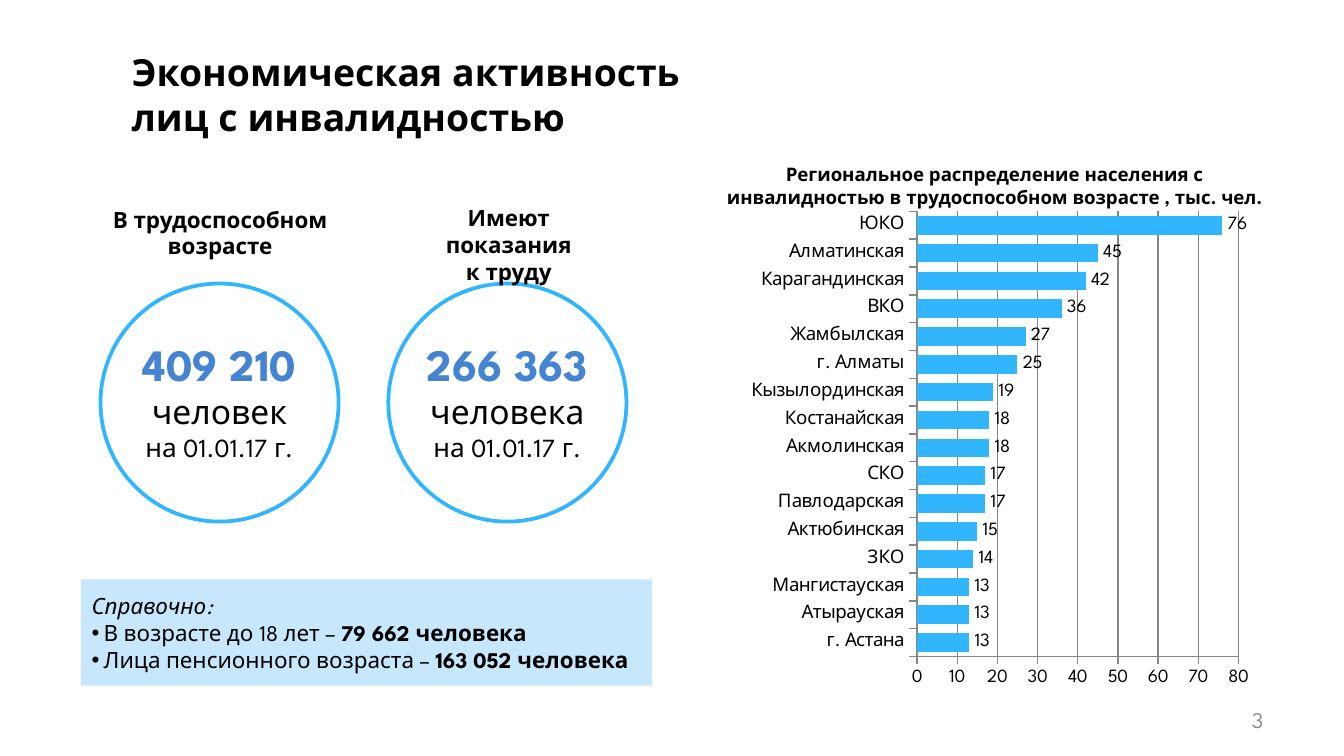
from dataclasses import dataclass

from lxml.etree import SubElement
from pptx import Presentation
from pptx.chart.data import CategoryChartData
from pptx.dml.color import RGBColor
from pptx.enum.chart import XL_CHART_TYPE, XL_LABEL_POSITION, XL_TICK_MARK
from pptx.enum.shapes import MSO_SHAPE
from pptx.enum.text import MSO_ANCHOR, MSO_AUTO_SIZE, PP_ALIGN
from pptx.oxml import parse_xml
from pptx.oxml.ns import nsdecls, qn
from pptx.util import Cm, Pt

TITLE = "Экономическая активность\vлиц с инвалидностью"
PAGE_NUMBER = "3"
GROUPS = [
    {"label": ["В трудоспособном возрасте"], "label_at": (1.85, 3.76, 4.62),
     "count": "409 210 ", "unit": "человек"},
    {"label": ["Имеют показания", "к труду"], "label_at": (7.62, 3.73, 3.99),
     "count": "266 363 ", "unit": "человека"},
]
DATE = "на 01.01.17 г."
REFERENCE = "Справочно:"
REFERENCE_ITEMS = [
    ("В возрасте до 18 лет – ", "79 662 человека"),
    ("Лица пенсионного возраста – ", "163 052 человека"),
]
CHART_TITLE = ("Региональное распределение населения с инвалидностью "
               "в трудоспособном возрасте , тыс. чел.")
REGIONS = [  # from the top bar down
    ("ЮКО", 76), ("Алматинская", 45), ("Карагандинская", 42), ("ВКО", 36),
    ("Жамбылская", 27), ("г. Алматы", 25), ("Кызылординская", 19),
    ("Костанайская", 18), ("Акмолинская", 18), ("СКО", 17),
    ("Павлодарская", 17), ("Актюбинская", 15), ("ЗКО", 14),
    ("Мангистауская", 13), ("Атырауская", 13), ("г. Астана", 13),
]
PLOT_AREA = {"x": 0.34, "y": 0.02, "w": 0.62, "h": 0.9}


@dataclass(frozen=True)
class Theme:
    font: str = "League Spartan"
    black: RGBColor = RGBColor(0, 0, 0)
    white: RGBColor = RGBColor(255, 255, 255)
    bright: RGBColor = RGBColor(0x31, 0xB6, 0xFD)
    number: RGBColor = RGBColor(0x45, 0x84, 0xD3)
    pale: RGBColor = RGBColor(0xC6, 0xE7, 0xFC)
    muted: RGBColor = RGBColor(0x8C, 0x8C, 0x8C)
    grid: RGBColor = RGBColor(0x86, 0x86, 0x86)
    title: int = 20
    count: int = 24
    unit: int = 18
    date: int = 14
    text: int = 12
    small: int = 10


THEME = Theme()


def style(font, size, color=THEME.black, bold=False, italic=False):
    font.name, font.size = THEME.font, Pt(size)
    font.bold, font.italic = bold, italic
    font.color.rgb = color


def place(shape, left, top, width, height):
    shape.left, shape.top = Cm(left), Cm(top)
    shape.width, shape.height = Cm(width), Cm(height)


def set_frame(frame, margins, anchor=MSO_ANCHOR.TOP):
    """Wrap the text; margins are left, top, right and bottom in cm."""
    frame.word_wrap, frame.auto_size = True, MSO_AUTO_SIZE.NONE
    frame.vertical_anchor = anchor
    (frame.margin_left, frame.margin_top,
     frame.margin_right, frame.margin_bottom) = map(Cm, margins)


def add_caption(page, lines, left, top, width, height, size):
    box = page.shapes.add_textbox(Cm(left), Cm(top), Cm(width), Cm(height))
    set_frame(box.text_frame, (0, 0.13, 0, 0.13))
    box.text_frame.text = "\n".join(lines)
    for para in box.text_frame.paragraphs:
        para.alignment = PP_ALIGN.CENTER
        style(para.font, size, bold=True)


def add_title(page):
    title = page.shapes.title
    place(title, 2.24, 0.58, 13.06, 2.39)
    set_frame(title.text_frame, (0.25, 0.13, 0.25, 0.13), MSO_ANCHOR.MIDDLE)
    title.text_frame.text = TITLE
    para = title.text_frame.paragraphs[0]
    para.alignment = PP_ALIGN.LEFT
    style(para.font, THEME.title, bold=True)


def add_group(page, index, group):
    """Add a ring with the head count and the caption above it."""
    size, pitch = 4.5, 5.44
    ring = page.shapes.add_shape(MSO_SHAPE.OVAL, Cm(1.9 + index * pitch),
                                 Cm(5.36), Cm(size), Cm(size))
    ring.shadow.inherit = False
    ring.fill.solid()
    ring.fill.fore_color.rgb = THEME.white
    ring.line.color.rgb, ring.line.width = THEME.bright, Pt(2)
    frame = ring.text_frame
    set_frame(frame, (0, 0, 0, 0.1), MSO_ANCHOR.MIDDLE)
    amount, date = frame.paragraphs[0], frame.add_paragraph()
    amount.alignment = date.alignment = PP_ALIGN.CENTER
    for words, points, color, bold in (
            (group["count"], THEME.count, THEME.number, True),
            (group["unit"], THEME.unit, THEME.black, False)):
        span = amount.add_run()
        span.text = words
        style(span.font, points, color, bold)
    date.text = DATE
    style(date.font, THEME.date)
    add_caption(page, group["label"], *group["label_at"], 1.27, THEME.text)


def add_bullet(para):
    properties = para._p.get_or_add_pPr()
    properties.set("marL", str(Cm(0.23)))
    properties.set("indent", str(-Cm(0.23)))
    SubElement(properties, qn("a:buChar")).set("char", "•")


def add_reference(page):
    box = page.placeholders[1]
    place(box, 1.53, 10.95, 10.79, 2.01)
    box.fill.solid()
    box.fill.fore_color.rgb = THEME.pale
    frame = box.text_frame
    set_frame(frame, (0.2, 0.13, 0.1, 0.13), MSO_ANCHOR.MIDDLE)
    heading = frame.paragraphs[0]
    heading.text = REFERENCE
    properties = heading._p.get_or_add_pPr()
    properties.set("marL", "0")
    properties.set("indent", "0")
    SubElement(properties, qn("a:buNone"))
    style(heading.font, THEME.text, italic=True)
    for words, amount in REFERENCE_ITEMS:
        para = frame.add_paragraph()
        add_bullet(para)
        style(para.font, THEME.text)
        para.add_run().text = words
        span = para.add_run()
        span.text = amount
        span.font.bold = True
    for para in frame.paragraphs:
        para.space_before = Pt(0)


def add_region_chart(page):
    data = CategoryChartData(number_format="0")
    names, values = zip(*reversed(REGIONS))
    data.categories = names
    data.add_series("Series 1", values)
    chart = page.shapes.add_chart(XL_CHART_TYPE.BAR_CLUSTERED, Cm(14), Cm(3.81),
                                  Cm(9.8), Cm(9.35), data).chart
    chart.has_legend = chart.has_title = False
    style(chart.font, THEME.small)
    plot = chart.plots[0]
    plot.gap_width, plot.vary_by_categories = 50, False
    bars = plot.series[0].format.fill
    bars.solid()
    bars.fore_color.rgb = THEME.bright
    plot.has_data_labels = True
    labels = plot.data_labels
    labels.show_value, labels.position = True, XL_LABEL_POSITION.OUTSIDE_END
    labels.number_format, labels.number_format_is_linked = "0", False
    scale = chart.value_axis
    scale.minimum_scale, scale.maximum_scale, scale.major_unit = 0, 80, 10
    scale.has_major_gridlines = True
    scale.major_gridlines.format.line.color.rgb = THEME.grid
    scale.tick_labels.number_format = "0"
    scale.tick_labels.number_format_is_linked = False
    for axis in (chart.category_axis, scale):
        axis.major_tick_mark = XL_TICK_MARK.OUTSIDE
        axis.minor_tick_mark = XL_TICK_MARK.NONE
        axis.format.line.color.rgb = THEME.grid
    chart.category_axis.has_major_gridlines = False
    set_plot_area(chart)


def set_plot_area(chart):
    area = chart._chartSpace.chart.plotArea
    for old in area.findall(qn("c:layout")):
        area.remove(old)
    modes = '<c:layoutTarget val="inner"/><c:xMode val="edge"/><c:yMode val="edge"/>'
    sides = "".join(f'<c:{side} val="{part}"/>' for side, part in PLOT_AREA.items())
    area.insert(0, parse_xml(f'<c:layout {nsdecls("c")}><c:manualLayout>'
                             f'{modes}{sides}</c:manualLayout></c:layout>'))


def add_page_number(page):
    box = page.shapes.add_textbox(Cm(18.21), Cm(13.23), Cm(5.92), Cm(0.76))
    set_frame(box.text_frame, (0.25, 0.13, 0.25, 0.13), MSO_ANCHOR.MIDDLE)
    para = box.text_frame.paragraphs[0]
    para.text, para.alignment = PAGE_NUMBER, PP_ALIGN.RIGHT
    style(para.font, THEME.text, THEME.muted)


def main():
    deck = Presentation()
    deck.slide_width, deck.slide_height = Cm(25.4), Cm(14.29)
    page = deck.slides.add_slide(deck.slide_layouts[1])
    add_title(page)
    add_page_number(page)
    for index, group in enumerate(GROUPS):
        add_group(page, index, group)
    add_reference(page)
    add_region_chart(page)
    add_caption(page, [CHART_TITLE], 13.69, 2.95, 10.21, 1.12, THEME.small)
    deck.save("out.pptx")


if __name__ == "__main__":
    main()
